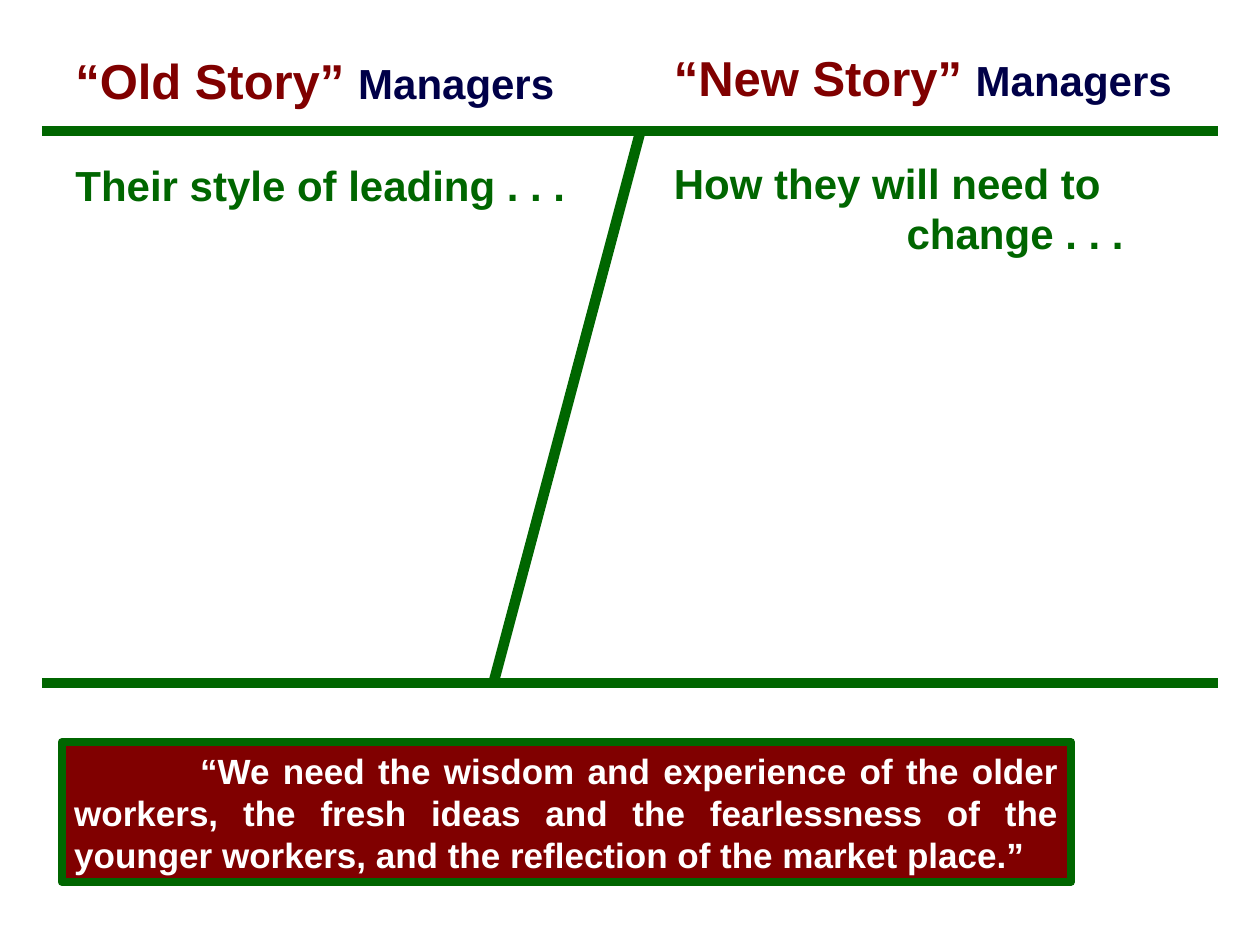
from lxml.etree import SubElement
from pptx import Presentation
from pptx.dml.color import RGBColor
from pptx.enum.shapes import MSO_CONNECTOR, MSO_SHAPE
from pptx.enum.text import PP_ALIGN
from pptx.oxml.ns import qn
from pptx.util import Pt

MAROON = RGBColor(0x80, 0x00, 0x00)
NAVY = RGBColor(0x00, 0x00, 0x48)
GREEN = RGBColor(0x00, 0x66, 0x00)
WHITE = RGBColor(0xFF, 0xFF, 0xFF)

# left, top, width, height, story, prompt lines as (text, left indent)
COLUMNS = [
    (36, 25.2, 300, 383, "“Old Story” ", [("Their style of leading . . .", 0)]),
    (378, 23.8, 300, 415, "“New Story” ",
     [("How they will need to", 0), ("change . . .", 133)]),
]
QUOTE = ("“We need the wisdom and experience of the older workers, the fresh "
         "ideas and the fearlessness of the younger workers, and the "
         "reflection of the market place.”")
QUOTE_BOX = (35.3, 424.1, 576.7, 79.9)

RULE_LEFT, RULE_RIGHT = 24, 696
RULE_TOP, RULE_BOTTOM = 74.9, 390.2
RULES = [
    (RULE_LEFT, RULE_BOTTOM, RULE_RIGHT, RULE_BOTTOM),
    (RULE_LEFT, RULE_TOP, RULE_RIGHT, RULE_TOP),
    (366, RULE_TOP, 282, RULE_BOTTOM),
]


def add_text(paragraph, text, size=24, color=GREEN):
    run = paragraph.add_run()
    run.text = text
    run.font.name = "Arial"
    run.font.size = Pt(size)
    run.font.bold = True
    run.font.color.rgb = color


def set_indent(paragraph, left=0, first=0):
    properties = paragraph._p.get_or_add_pPr()
    properties.set("marL", str(Pt(left)))
    properties.set("indent", str(Pt(first)))


def add_column(slide, left, top, width, height, story, prompt):
    column = slide.shapes.add_textbox(Pt(left), Pt(top), Pt(width), Pt(height))
    frame = column.text_frame
    frame.word_wrap = True
    heading = frame.paragraphs[0]
    add_text(heading, story, size=28, color=MAROON)
    add_text(heading, "Managers", color=NAVY)
    for number, (text, indent) in enumerate(prompt):
        line = frame.add_paragraph()
        if number == 0:
            line.space_before = Pt(29)
        set_indent(line, left=indent)
        add_text(line, text)


def add_rule(slide, *ends):
    rule = slide.shapes.add_connector(MSO_CONNECTOR.STRAIGHT, *map(Pt, ends))
    rule.line.color.rgb = GREEN
    rule.line.width = Pt(6)
    SubElement(rule._element.spPr, qn("a:effectLst"))


def add_quote(slide):
    quote = slide.shapes.add_shape(MSO_SHAPE.RECTANGLE, *map(Pt, QUOTE_BOX))
    quote.shadow.inherit = False
    quote.fill.solid()
    quote.fill.fore_color.rgb = MAROON
    quote.line.color.rgb = GREEN
    quote.line.width = Pt(4.5)
    quote.text_frame.word_wrap = True
    paragraph = quote.text_frame.paragraphs[0]
    paragraph.alignment = PP_ALIGN.JUSTIFY
    set_indent(paragraph, first=72)
    add_text(paragraph, QUOTE, size=20, color=WHITE)


def main():
    deck = Presentation()
    deck.slide_width, deck.slide_height = Pt(720), Pt(540)
    slide = deck.slides.add_slide(deck.slide_layouts[6])
    for column in COLUMNS:
        add_column(slide, *column)
    for ends in RULES:
        add_rule(slide, *ends)
    add_quote(slide)
    deck.save("out.pptx")


if __name__ == "__main__":
    main()
